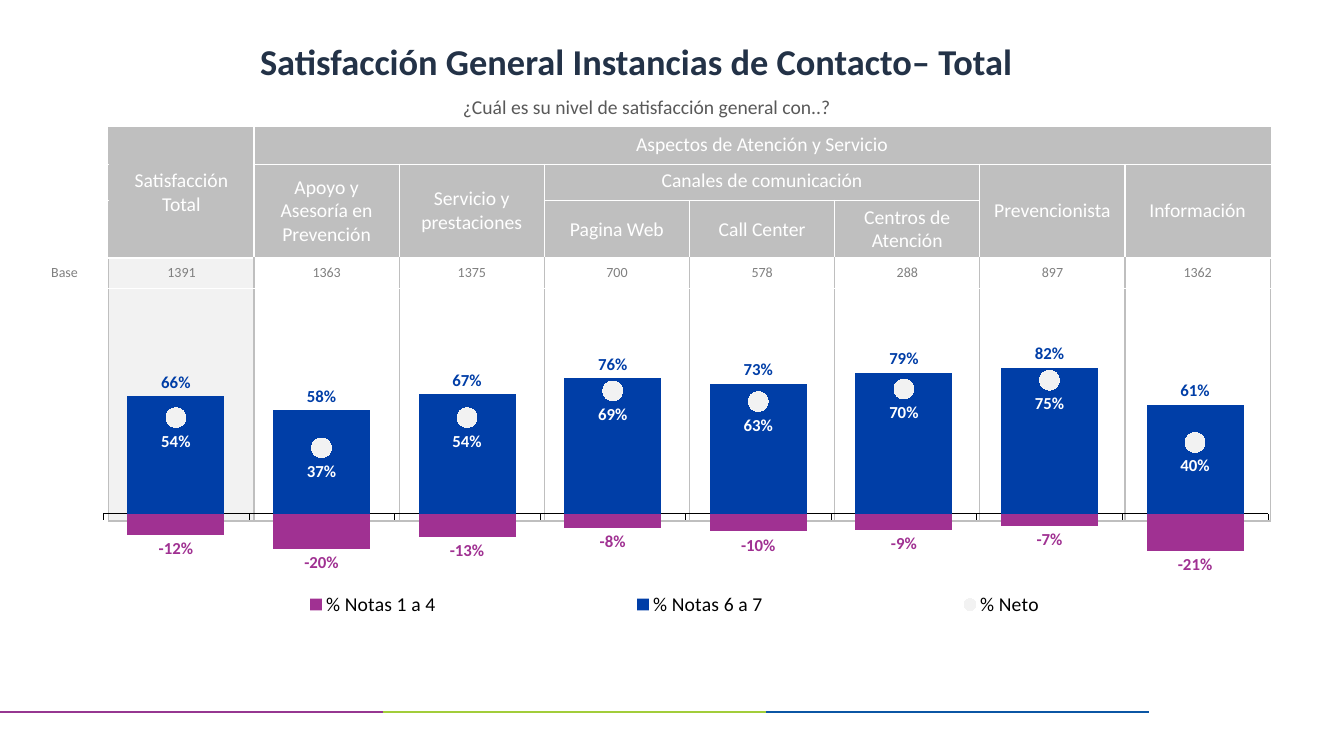
from pptx import Presentation
from pptx.chart.data import CategoryChartData
from pptx.dml.color import RGBColor as RGB
from pptx.enum.chart import XL_CHART_TYPE as Kind, XL_LABEL_POSITION as Pos
from pptx.enum.chart import XL_LEGEND_POSITION as Side, XL_MARKER_STYLE as Mark
from pptx.enum.chart import XL_TICK_LABEL_POSITION as TickText, XL_TICK_MARK as Tick
from pptx.enum.shapes import MSO_CONNECTOR as Link
from pptx.enum.text import MSO_ANCHOR as Anchor, MSO_AUTO_SIZE as Auto, PP_ALIGN as Align
from pptx.oxml import parse_xml
from pptx.oxml.ns import nsdecls, qn
from pptx.util import Inches, Pt


class Theme:
    font = "Calibri"
    navy, text, base = "233247", "595959", "808080"
    grey, pale, white, black = "BFBFBF", "F2F2F2", "FFFFFF", "000000"
    low, high = "A03192", "003EA7"
    stripes = ["963791", "A2CD3A", "0B56A4"]
    title, body, label, small = Pt(26), Pt(14), Pt(12), Pt(10)


def style(font, color, size, bold=False):
    for key, value in {"name": Theme.font, "size": size, "bold": bold}.items():
        setattr(font, key, value)
    font.color.rgb = RGB.from_string(color)


def place(part, index, box, inner=""):
    """Give a chart part a manual layout, as fractions of the chart."""
    for old in part.findall(qn("c:layout")):
        part.remove(old)
    sizes = "".join(f'<c:{key} val="{value}"/>' for key, value in zip("xywh", box))
    part.insert(index, parse_xml(
        f'<c:layout {nsdecls("c")}><c:manualLayout>{inner}<c:xMode val="edge"/>'
        f'<c:yMode val="edge"/>{sizes}</c:manualLayout></c:layout>'))


deck = Presentation()
deck.slide_width, deck.slide_height = Inches(13.33), Inches(7.5)
slide = deck.slides.add_slide(deck.slide_layouts[5])
shapes = slide.shapes

# Footer stripes
for i, color in enumerate(Theme.stripes):
    left = 3.8 * i
    stripe = shapes.add_connector(Link.STRAIGHT, Inches(left), Inches(7.06),
                                  Inches(left + 3.8), Inches(7.06))
    stripe.line.color.rgb = RGB.from_string(color)
    stripe.line.width = Pt(1.5)
    stripe.element.spPr.append(parse_xml(f'<a:effectLst {nsdecls("a")}/>'))

# Title and question
title = shapes.title
spots = {"left": 0.92, "top": 0.33, "width": 10.79, "height": 0.61}
for key, value in spots.items():
    setattr(title, key, Inches(value))
title.text_frame.text = "Satisfacción General Instancias de Contacto– Total"
title.text_frame.vertical_anchor = Anchor.MIDDLE
para = title.text_frame.paragraphs[0]
para.alignment, para.line_spacing = Align.CENTER, 0.9
style(para.runs[0].font, Theme.navy, Theme.title, True)

query = shapes.add_textbox(Inches(1.02), Inches(0.89), Inches(10.79), Inches(0.57))
frame = query.text_frame
frame.word_wrap, frame.auto_size = True, Auto.SHAPE_TO_FIT_TEXT
para = frame.paragraphs[0]
para.text, para.alignment = "¿Cuál es su nivel de satisfacción general con..?", Align.CENTER
style(para.runs[0].font, Theme.text, Theme.body)

# Table: header rows, base row and the frame behind the chart
heads = {  # (row, column): (text, rows, columns)
    (0, 1): ("Satisfacción Total", 3, 1),
    (0, 2): ("Aspectos de Atención y Servicio", 1, 7),
    (1, 2): ("Apoyo y Asesoría en Prevención", 2, 1),
    (1, 3): ("Servicio y prestaciones", 2, 1),
    (1, 4): ("Canales de comunicación", 1, 3),
    (1, 7): ("Prevencionista", 2, 1),
    (1, 8): ("Información", 2, 1),
    (2, 4): ("Pagina Web", 1, 1),
    (2, 5): ("Call Center", 1, 1),
    (2, 6): ("Centros de Atención", 1, 1),
}
bases = ["Base", 1391, 1363, 1375, 700, 578, 288, 897, 1362]
widths = [0.88] + [1.44] * 8
heights = [0.36, 0.36, 0.57, 0.3, 2.31]
grid = shapes.add_table(5, 9, Inches(0.2), Inches(1.27),
                        Inches(sum(widths)), Inches(sum(heights))).table
grid.first_row = grid.horz_banding = False
for col, width in zip(grid.columns, widths):
    col.width = Inches(width)
for row, height in zip(grid.rows, heights):
    row.height = Inches(height)
for (r, c), (_, down, across) in heads.items():
    if down * across > 1:
        grid.cell(r, c).merge(grid.cell(r + down - 1, c + across - 1))

for r in range(5):
    for c in range(9):
        cell = grid.cell(r, c)
        if cell.is_spanned:
            continue
        words, down, across = heads.get((r, c), ("", 1, 1))
        if r == 3:
            words = str(bases[c])
        fill = Theme.grey if (r, c) in heads else Theme.pale if r > 2 and c == 1 else None
        if fill:
            cell.fill.solid()
            cell.fill.fore_color.rgb = RGB.from_string(fill)
        else:
            cell.fill.background()
        cell.vertical_anchor = Anchor.TOP if across > 1 else Anchor.MIDDLE
        if down * across == 1:
            cell.margin_left = cell.margin_right = Inches(0.02)
            cell.margin_top = cell.margin_bottom = 0
        if words:
            para = cell.text_frame.paragraphs[0]
            para.text, para.alignment = words, Align.CENTER
            look = (Theme.base, Theme.small) if r == 3 else (Theme.white, Theme.body)
            style(para.runs[0].font, *look)
        # Grey on the outside and between the lower columns, white elsewhere
        grey = [edge in (1, 9) or (r > 2 and edge > 0) for edge in (c, c + across)]
        grey += [c > 0 and edge in (0, 5) for edge in (r, r + down)]
        for i, (side, dark) in enumerate(zip("LRTB", grey)):
            color = Theme.grey if dark else Theme.white
            cell._tc.get_or_add_tcPr().insert(i, parse_xml(
                f'<a:ln{side} {nsdecls("a")} w="12700"><a:solidFill>'
                f'<a:srgbClr val="{color}"/></a:solidFill></a:ln{side}>'))

# Columns for low and high marks, markers for the net score
data = CategoryChartData(number_format="0%")
data.categories = [str(n) for n in range(1, 9)]
data.add_series("% Notas 1 a 4", [-0.12, -0.2, -0.13, -0.08, -0.1, -0.09, -0.07, -0.21])
data.add_series("% Notas 6 a 7", [0.66, 0.58, 0.67, 0.76, 0.73, 0.79, 0.82, 0.61])
data.add_series("% Neto", [0.54, 0.37, 0.54, 0.69, 0.63, 0.7, 0.75, 0.4])
chart = shapes.add_chart(Kind.COLUMN_CLUSTERED, Inches(0.54), Inches(2.77),
                         Inches(12.06), Inches(3.82), data).chart
chart.has_title = False
style(chart.font, Theme.black, Theme.body)
bars = chart.plots[0]
for key, value in {"gap_width": 50, "overlap": 100, "vary_by_categories": False}.items():
    setattr(bars, key, value)

root = chart._chartSpace
bar = root.xpath(".//c:barChart")[0]
net = bar.findall(qn("c:ser"))[2]
for flip in net.findall(qn("c:invertIfNegative")):
    net.remove(flip)
axes = "".join(f'<c:axId val="{a.get("val")}"/>' for a in bar.findall(qn("c:axId")))
line = parse_xml(f'<c:lineChart {nsdecls("c")}><c:grouping val="standard"/>'
                 f'<c:varyColors val="0"/><c:marker val="1"/>{axes}</c:lineChart>')
line.insert(2, net)
bar.addnext(line)

dots = chart.plots[1].series[0]
dots.smooth = False
dots.format.line.fill.background()
dots.marker.style, dots.marker.size = Mark.CIRCLE, 14
dots.marker.format.fill.solid()
dots.marker.format.fill.fore_color.rgb = RGB.from_string(Theme.pale)
dots.marker.format.line.fill.background()
low, high = bars.series
for series, color in ((low, Theme.low), (high, Theme.high)):
    series.format.fill.solid()
    series.format.fill.fore_color.rgb = RGB.from_string(color)
    series.invert_if_negative = False
for series, color, pos in ((low, Theme.low, Pos.OUTSIDE_END),
                           (high, Theme.high, Pos.OUTSIDE_END),
                           (dots, Theme.white, Pos.BELOW)):
    labels = series.data_labels
    style(labels.font, color, Theme.label, True)
    for key, value in {"show_value": True, "position": pos, "number_format": "0%",
                       "number_format_is_linked": False}.items():
        setattr(labels, key, value)

scale, axis = chart.value_axis, chart.category_axis
for key, value in {"minimum_scale": -0.6, "maximum_scale": 1, "major_unit": 0.2,
                   "has_major_gridlines": False, "visible": False}.items():
    setattr(scale, key, value)
axis.tick_label_position, axis.major_tick_mark = TickText.NONE, Tick.OUTSIDE
axis.format.line.color.rgb = RGB.from_string(Theme.black)
axis.format.line.width = Pt(0.25)

chart.has_legend = True
legend = chart.legend
legend.position, legend.include_in_layout = Side.LEFT, False
style(legend.font, Theme.black, Theme.body)
place(root.xpath(".//c:legend")[0], 1, (0.05, 0.8, 0.92, 0.09))
place(root.xpath(".//c:plotArea")[0], 0, (0.04, 0.147, 0.958, 0.739),
      '<c:layoutTarget val="inner"/>')

deck.save("out.pptx")
